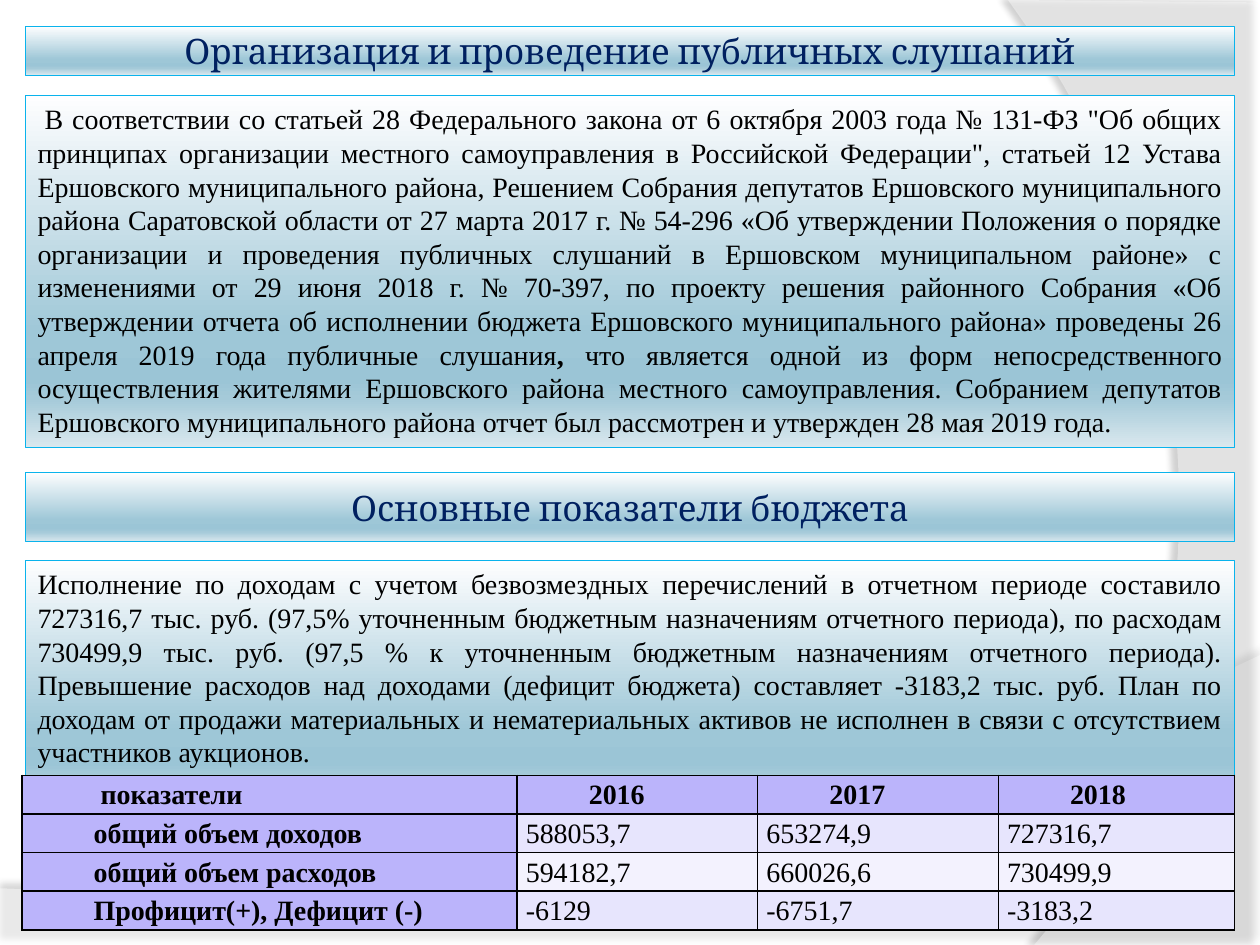
from pptx import Presentation
from pptx.dml.color import RGBColor
from pptx.enum.text import MSO_ANCHOR, PP_ALIGN
from pptx.oxml import parse_xml
from pptx.oxml.ns import nsdecls, qn
from pptx.util import Pt

THEME = {
    "edge": "0AB3EC", "title": "002060", "text": "000000", "wave": "FFFFFF",
    "head": "BBB4FB", "bands": ("E7E5FD", "F3F2FE"),
    "stops": ((0, "FEFEFF"), (68, "9EC7D7"), (81, "9BC5D6"), (86, "A5CAD9"), (100, "DAE8EE")),
    "serif": "Cambria", "body": "Times New Roman", "big": 20, "base": 16,
}
LAW = (
    ("В соответствии со статьей 28 Федерального закона от 6 октября 2003 года № 131-ФЗ "
     "\"Об общих принципах организации местного самоуправления в Российской Федерации\", "
     "статьей 12 Устава Ершовского муниципального района, Решением Собрания депутатов "
     "Ершовского муниципального района Саратовской области от 27 марта 2017 г. № 54-296 "
     "«Об утверждении Положения о порядке организации и проведения публичных слушаний в "
     "Ершовском муниципальном районе» с изменениями от 29 июня 2018 г. № 70-397, по проекту "
     "решения районного Собрания «Об утверждении отчета об исполнении бюджета Ершовского "
     "муниципального района» проведены 26 апреля 2019 года публичные слушания", False),
    (", ", True),
    ("что является одной из форм непосредственного осуществления жителями Ершовского района "
     "местного самоуправления. Собранием депутатов Ершовского муниципального района отчет "
     "был рассмотрен и утвержден 28 мая 2019 года.", False),
)
SUM = (
    ("Исполнение по доходам с учетом безвозмездных перечислений в отчетном периоде составило "
     "727316,7 тыс. руб. (97,5% уточненным бюджетным назначениям отчетного периода), по "
     "расходам 730499,9 тыс. руб. (97,5 % к уточненным бюджетным назначениям отчетного "
     "периода). Превышение расходов над доходами (дефицит бюджета) составляет -3183,2 тыс. "
     "руб. План по доходам от продажи материальных и нематериальных активов не исполнен в "
     "связи с отсутствием участников аукционов.", False),
)
# kind, top, height, first-line indent, runs
BOXES = (
    ("title", 15, 28, 0, (("Организация и проведение публичных слушаний", False),)),
    ("body", 54.7, 201, 4, LAW),
    ("title", 270, 39.6, 0, (("Основные показатели бюджета", False),)),
    ("body", 320.4, 143.3, 0, SUM),
)
ROWS = (
    ("показатели", "2016", "2017", "2018"),
    ("общий объем доходов", "588053,7", "653274,9", "727316,7"),
    ("общий объем расходов", "594182,7", "660026,6", "730499,9"),
    ("Профицит(+), Дефицит (-)", "-6129", "-6751,7", "-3183,2"),
)
COLS = (283, 137.5, 137.5, 135)
# start, curve points, closing corners, opacity, shadow opacity and turn
WAVES = (
    ((720, 374.4), ((402.5, 524.9), (281.5, 517.7), (0, 507.6)),
     ((0, 540), (720, 540)), 45, 35, 270),
    ((591, 540), ((673, 445.7), (733, 216), (576, 0)),
     ((720, 1.4), (720, 540)), 40, 45, 180),
)
LEFT, WIDE = 14.4, 691.2
STEPS = 40


def assign(item, vals):
    """Set every attribute named in vals."""
    for key, val in vals.items():
        setattr(item, key, val)


def style(font, name, size, tone, bold):
    """Format a font."""
    assign(font, {"name": name, "size": Pt(size), "bold": bold})
    font.color.rgb = RGBColor.from_string(tone)


def curve(pts):
    """Sample a cubic curve through its control points."""
    for n in range(1, STEPS + 1):
        t = n / STEPS
        parts = ((1 - t) ** 3, 3 * t * (1 - t) ** 2, 3 * t * t * (1 - t), t ** 3)
        yield tuple(sum(k * p[axis] for k, p in zip(parts, pts)) for axis in (0, 1))


def wave(slide, start, bend, ends, clear, dark, turn):
    """Draw a translucent curved panel with a soft shadow."""
    pts = [*curve((start, *bend)), *ends]
    pen = slide.shapes.build_freeform(Pt(start[0]), Pt(start[1]))
    pen.add_line_segments([(Pt(x), Pt(y)) for x, y in pts], close=True)
    form = pen.convert_to_shape()
    form.fill.solid()
    form.fill.fore_color.rgb = RGBColor.from_string(THEME["wave"])
    form.line.fill.background()
    form.shadow.inherit = False
    props = form._element.spPr
    props.find(".//" + qn("a:srgbClr")).append(
        parse_xml(f'<a:alpha {nsdecls("a")} val="{clear * 1000}"/>'))
    props.find(qn("a:effectLst")).append(parse_xml(
        f'<a:outerShdw {nsdecls("a")} blurRad="{Pt(4)}" dist="{Pt(4)}" dir="{turn * 60000}" '
        f'algn="ctr" rotWithShape="0"><a:srgbClr val="{THEME["text"]}">'
        f'<a:alpha val="{dark * 1000}"/></a:srgbClr></a:outerShdw>'))


def panel(slide, kind, top, high, dent, runs):
    """Draw a gradient box holding a title or a paragraph."""
    head = kind == "title"
    box = slide.shapes.add_textbox(Pt(LEFT), Pt(top), Pt(WIDE), Pt(high))
    box.fill.gradient()
    box.fill.gradient_angle = 270
    stops = box._element.spPr.find(".//" + qn("a:gsLst"))
    for old in list(stops):
        stops.remove(old)
    for spot, tone in THEME["stops"]:
        stops.append(parse_xml(f'<a:gs {nsdecls("a")} pos="{spot * 1000}">'
                               f'<a:srgbClr val="{tone}"/></a:gs>'))
    box.line.color.rgb = RGBColor.from_string(THEME["edge"])
    box.line.width = Pt(0.75)
    side = Pt(3.6 if head else 7.2)
    assign(box.text_frame, {
        "word_wrap": True, "margin_left": side, "margin_right": side,
        "margin_top": Pt(3.6), "margin_bottom": Pt(3.6),
        "vertical_anchor": MSO_ANCHOR.MIDDLE if head else MSO_ANCHOR.TOP})
    para = box.text_frame.paragraphs[0]
    para.alignment = PP_ALIGN.CENTER if head else PP_ALIGN.JUSTIFY
    if dent:
        para._p.get_or_add_pPr().set("indent", str(Pt(dent)))
    look = (("serif", "big", "title") if head else ("body", "base", "text"))
    for text, bold in runs:
        run = para.add_run()
        run.text = text
        style(run.font, *(THEME[key] for key in look), bold)


def grid(slide):
    """Draw the table of budget figures."""
    high = 22.1
    table = slide.shapes.add_table(len(ROWS), len(COLS), Pt(12.5), Pt(443),
                                   Pt(sum(COLS)), Pt(high * len(ROWS))).table
    for col, wide in zip(table.columns, COLS):
        col.width = Pt(wide)
    for r, row in enumerate(ROWS):
        table.rows[r].height = Pt(high)
        for c, text in enumerate(row):
            cell, head = table.cell(r, c), r == 0 or c == 0
            assign(cell, {"margin_left": Pt(5), "margin_right": Pt(5),
                          "margin_top": 0, "margin_bottom": 0})
            props = cell._tc.get_or_add_tcPr()
            for edge in "LRTB":
                props.append(parse_xml(
                    f'<a:ln{edge} {nsdecls("a")} w="{Pt(1)}"><a:solidFill>'
                    f'<a:srgbClr val="{THEME["text"]}"/></a:solidFill></a:ln{edge}>'))
            cell.fill.solid()
            tone = THEME["head"] if head else THEME["bands"][(r - 1) % 2]
            cell.fill.fore_color.rgb = RGBColor.from_string(tone)
            para = cell.text_frame.paragraphs[0]
            assign(para, {"line_spacing": 1.15, "space_after": Pt(0 if head else 10),
                          "alignment": PP_ALIGN.JUSTIFY if head else PP_ALIGN.LEFT})
            if head:
                dent = 40 if r == c == 0 else 36
                para._p.get_or_add_pPr().set("marL", str(Pt(dent)))
            run = para.add_run()
            run.text = text
            style(run.font, THEME["body"], THEME["base"], THEME["text"], head)


def main():
    """Build and save the slide."""
    deck = Presentation()
    assign(deck, {"slide_width": Pt(720), "slide_height": Pt(540)})
    slide = deck.slides.add_slide(deck.slide_layouts[6])
    for item in WAVES:
        wave(slide, *item)
    for item in BOXES:
        panel(slide, *item)
    grid(slide)
    deck.save("out.pptx")


if __name__ == "__main__":
    main()
